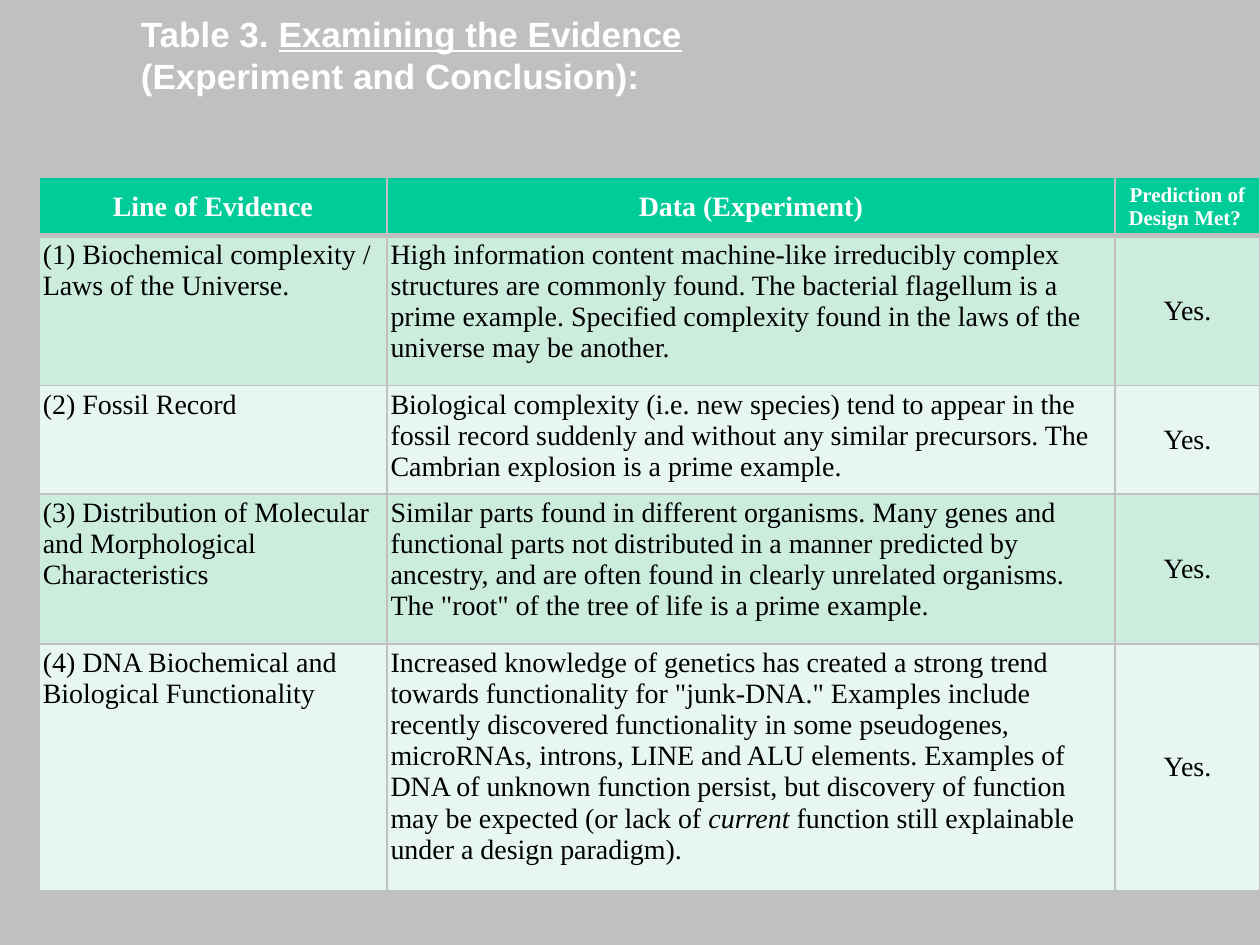
from dataclasses import dataclass

from lxml import etree
from pptx import Presentation
from pptx.dml.color import RGBColor
from pptx.enum.text import MSO_ANCHOR, PP_ALIGN
from pptx.oxml.ns import qn
from pptx.util import Inches, Pt

TOP, MIDDLE = MSO_ANCHOR.TOP, MSO_ANCHOR.MIDDLE
LEFT, CENTER = PP_ALIGN.LEFT, PP_ALIGN.CENTER


@dataclass(frozen=True)
class Theme:
    background: str = "C0C0C0"
    header: str = "00CC99"
    bands: tuple[str, str] = ("CCECDE", "E7F6EF")
    light_text: str = "FFFFFF"
    dark_text: str = "000000"
    title_font: str = "Arial"
    table_font: str = "Times New Roman"
    title_size: int = 20
    body_size: int = 16
    small_size: int = 12
    thin_line: int = 1
    thick_line: int = 3


@dataclass(frozen=True)
class Evidence:
    line: str
    data: tuple[str, ...]  # every second part is italic
    prediction_met: str = "Yes."


@dataclass(frozen=True)
class CellStyle:
    fill: str
    color: str
    size: int
    bold: bool = False
    align: PP_ALIGN = LEFT
    anchor: MSO_ANCHOR = TOP
    top_line: int = 1
    bottom_line: int = 1


THEME = Theme()
COLUMN_WIDTHS = (2.76, 5.78, 1.15)
ROW_HEIGHTS = (0.45, 1.19, 0.85, 1.19, 1.96)
HEADERS = (
    ("Line of Evidence", THEME.body_size),
    ("Data (Experiment)", THEME.body_size),
    ("Prediction of Design Met? ", THEME.small_size),
)
EVIDENCE = (
    Evidence(
        "(1) Biochemical complexity / Laws of the Universe.",
        ("High information content machine-like irreducibly complex structures are "
         "commonly found. The bacterial flagellum is a prime example. Specified "
         "complexity found in the laws of the universe may be another.",),
    ),
    Evidence(
        "(2) Fossil Record",
        ("Biological complexity (i.e. new species) tend to appear in the fossil record "
         "suddenly and without any similar precursors. The Cambrian explosion is a "
         "prime example.",),
    ),
    Evidence(
        "(3) Distribution of Molecular and Morphological Characteristics",
        ("Similar parts found in different organisms. Many genes and functional parts "
         "not distributed in a manner predicted by ancestry, and are often found in "
         'clearly unrelated organisms. The "root" of the tree of life is a prime example.',),
    ),
    Evidence(
        "(4) DNA Biochemical and Biological Functionality",
        ("Increased knowledge of genetics has created a strong trend towards "
         'functionality for "junk-DNA." Examples include recently discovered '
         "functionality in some pseudogenes, microRNAs, introns, LINE and ALU elements. "
         "Examples of DNA of unknown function persist, but discovery of function may be "
         "expected (or lack of ",
         "current ",
         "function still explainable under a design paradigm)."),
    ),
)


def style_font(font, name: str, size: int, color: str, bold: bool) -> None:
    font.name = name
    font.size = Pt(size)
    font.bold = bold
    font.color.rgb = RGBColor.from_string(color)


def add_title(slide) -> None:
    title = slide.shapes.add_textbox(Inches(1.02), Inches(0), Inches(8.56), Inches(0.86))
    frame = title.text_frame
    frame.word_wrap = True
    frame.vertical_anchor = MIDDLE
    paragraph = frame.paragraphs[0]
    style_font(paragraph.font, THEME.title_font, THEME.title_size, THEME.light_text, True)
    paragraph.add_run().text = "Table 3. "
    subject = paragraph.add_run()
    subject.text = "Examining the Evidence"
    subject.font.underline = True
    paragraph.add_line_break()
    paragraph.add_run().text = "(Experiment and Conclusion):"


def set_borders(cell, top: int, bottom: int) -> None:
    properties = cell._tc.get_or_add_tcPr()
    widths = {"L": THEME.thin_line, "R": THEME.thin_line, "T": top, "B": bottom}
    for side, width in widths.items():
        line = etree.SubElement(properties, qn(f"a:ln{side}"), w=str(Pt(width)))
        fill = etree.SubElement(line, qn("a:solidFill"))
        etree.SubElement(fill, qn("a:srgbClr"), val=THEME.background)


def fill_cell(cell, parts: tuple[str, ...], style: CellStyle) -> None:
    set_borders(cell, style.top_line, style.bottom_line)
    cell.fill.solid()
    cell.fill.fore_color.rgb = RGBColor.from_string(style.fill)
    cell.margin_left = cell.margin_right = Inches(0.03)
    cell.margin_top = cell.margin_bottom = Inches(0.03)
    cell.vertical_anchor = style.anchor
    paragraph = cell.text_frame.paragraphs[0]
    paragraph.alignment = style.align
    style_font(paragraph.font, THEME.table_font, style.size, style.color, style.bold)
    for index, part in enumerate(parts):
        run = paragraph.add_run()
        run.text = part
        if index % 2:
            run.font.italic = True


def add_evidence_table(slide) -> None:
    table = slide.shapes.add_table(
        len(ROW_HEIGHTS), len(COLUMN_WIDTHS), Inches(0.31), Inches(1.41),
        Inches(sum(COLUMN_WIDTHS)), Inches(sum(ROW_HEIGHTS)),
    ).table
    table.first_row = table.horz_banding = False
    for column, width in zip(table.columns, COLUMN_WIDTHS):
        column.width = Inches(width)
    for row, height in zip(table.rows, ROW_HEIGHTS):
        row.height = Inches(height)

    # Header row
    for column, (text, size) in enumerate(HEADERS):
        style = CellStyle(THEME.header, THEME.light_text, size, True, CENTER, MIDDLE,
                          bottom_line=THEME.thick_line)
        fill_cell(table.cell(0, column), (text,), style)

    # Evidence rows in alternating bands
    for row, evidence in enumerate(EVIDENCE, start=1):
        band = THEME.bands[(row - 1) % 2]
        top_line = THEME.thick_line if row == 1 else THEME.thin_line
        text_style = CellStyle(band, THEME.dark_text, THEME.body_size, top_line=top_line)
        answer_style = CellStyle(band, THEME.dark_text, THEME.body_size, False,
                                 CENTER, MIDDLE, top_line)
        fill_cell(table.cell(row, 0), (evidence.line,), text_style)
        fill_cell(table.cell(row, 1), evidence.data, text_style)
        fill_cell(table.cell(row, 2), (evidence.prediction_met,), answer_style)


def main() -> None:
    presentation = Presentation()
    presentation.slide_width = Inches(10)
    presentation.slide_height = Inches(7.5)
    slide = presentation.slides.add_slide(presentation.slide_layouts[6])
    slide.background.fill.solid()
    slide.background.fill.fore_color.rgb = RGBColor.from_string(THEME.background)
    add_title(slide)
    add_evidence_table(slide)
    presentation.save("out.pptx")


if __name__ == "__main__":
    main()
